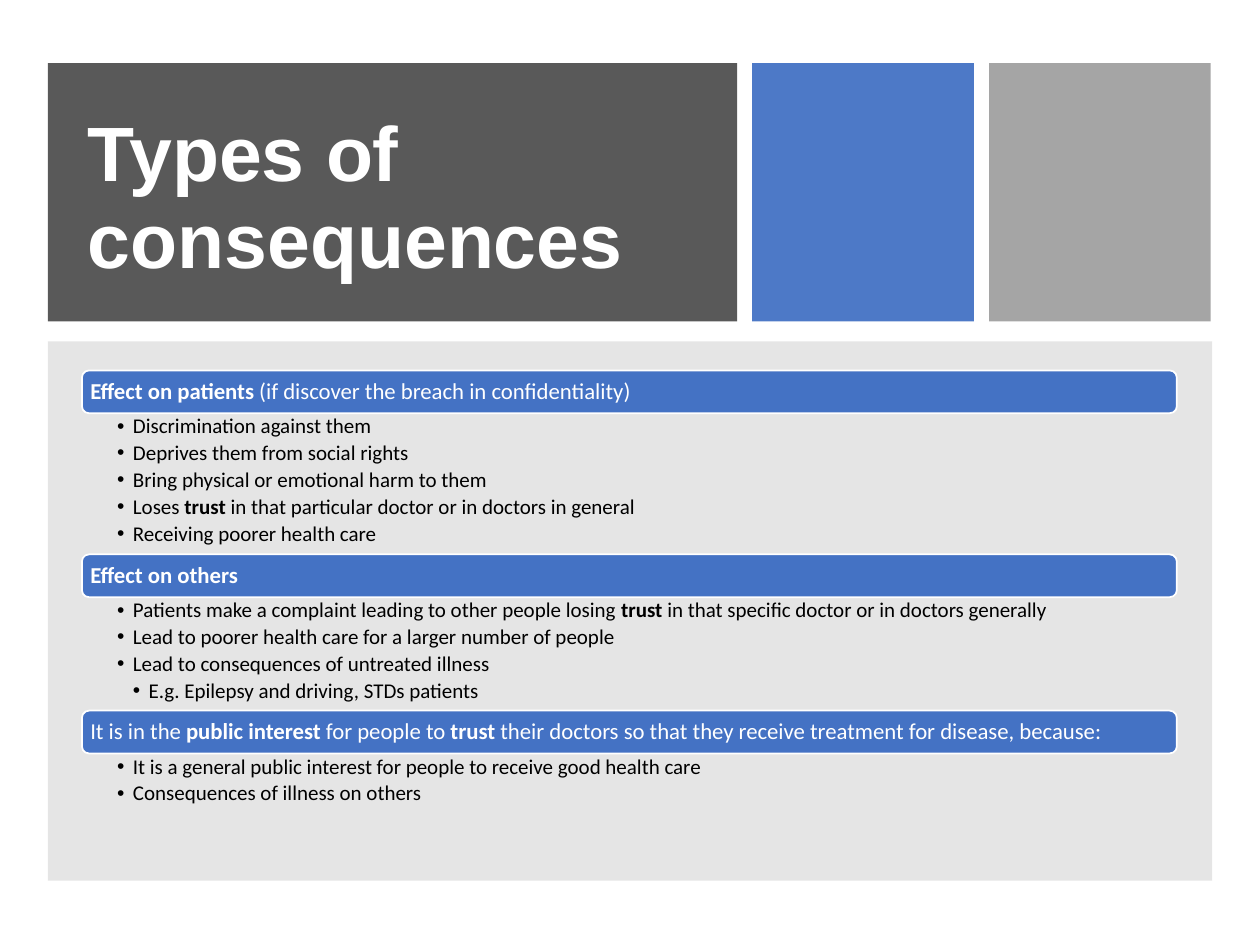
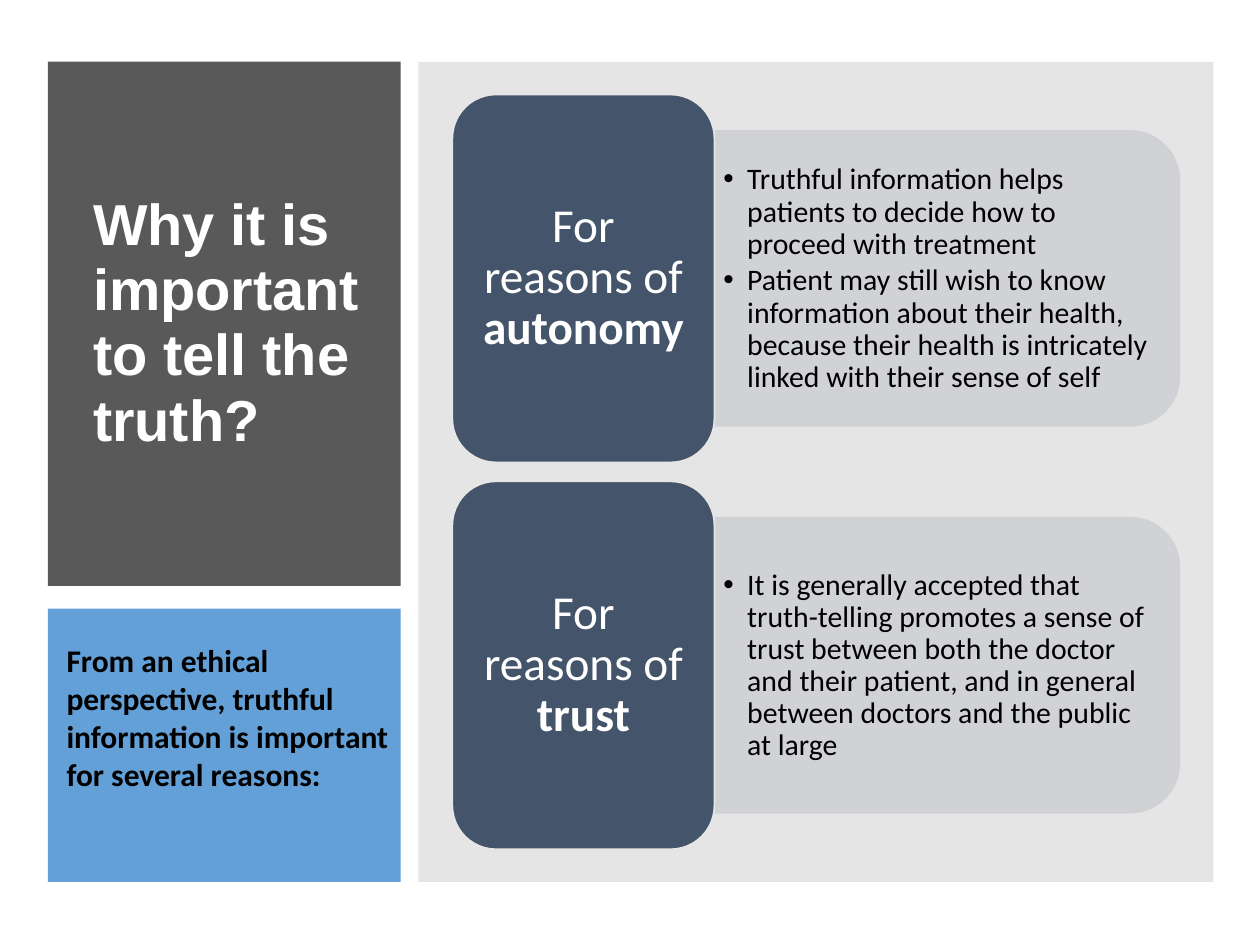
from pptx import Presentation
from pptx.dml.color import RGBColor
from pptx.enum.shapes import MSO_SHAPE
from pptx.enum.text import MSO_ANCHOR, PP_ALIGN
from pptx.oxml.ns import qn
from pptx.util import Inches, Pt
from lxml import etree

RECT, ROUND = MSO_SHAPE.RECTANGLE, MSO_SHAPE.ROUNDED_RECTANGLE
TAB = MSO_SHAPE.ROUND_2_SAME_RECTANGLE
TOP, MID = MSO_ANCHOR.TOP, MSO_ANCHOR.MIDDLE
LEFT, MIDDLE = PP_ALIGN.LEFT, PP_ALIGN.CENTER


class Theme:
    head, body = "Arial", "Calibri"
    white, black = "FFFFFF", "000000"
    dark, blue, sky, grey = "595959", "4472C4", "5B9BD5", "A5A5A5"
    panel, slate, edge, pale = "808080", "44546A", "E7E6E6", "CFD1D4"
    big, title, card, note, point, bar, item = 44, 33, 27, 18, 17, 13, 12


# Asterisks enclose bold words; each bullet is (level, text).
EFFECTS = [
    ("*Effect on patients *(if discover the breach in confidentiality)", [
        (0, "Discrimination against them"),
        (0, "Deprives them from social rights"),
        (0, "Bring physical or emotional harm to them"),
        (0, "Loses *trust* in that particular doctor or in doctors in general"),
        (0, "Receiving poorer health care")]),
    ("*Effect on others*", [
        (0, "Patients make a complaint leading to other people losing *trust*"
            " in that specific doctor or in doctors generally"),
        (0, "Lead to poorer health care for a larger number of people"),
        (0, "Lead to consequences of untreated illness"),
        (1, "E.g. Epilepsy and driving, STDs patients")]),
    ("It is in the *public interest *for people to *trust* their doctors"
     " so that they receive treatment for disease, because:", [
        (0, "It is a general public interest for people to receive good health care"),
        (0, "Consequences of illness on others")]),
]
REASONS = [
    ("For reasons of *autonomy*", [
        (0, "Truthful information helps patients to decide how to proceed with treatment"),
        (0, "Patient may still wish to know information about their health, because"
            " their health is intricately linked with their sense of self")]),
    ("For reasons of *trust*", [
        (0, "It is generally accepted that truth-telling promotes a sense of trust"
            " between both the doctor and their patient, and in general between"
            " doctors and the public at large")]),
]
NOTE = "*From an ethical perspective, truthful information is important for several reasons:*"


def paint(fill, color, alpha=100):
    fill.solid()
    fill.fore_color.rgb = RGBColor.from_string(color)
    if alpha < 100:
        for tone in fill._xPr.iter(qn("a:srgbClr")):
            etree.SubElement(tone, qn("a:alpha")).set("val", str(alpha * 1000))


def block(slide, box, color, alpha=100, kind=RECT, line=None):
    shape = slide.shapes.add_shape(kind, *map(Inches, box))
    shape.shadow.inherit = False
    paint(shape.fill, color, alpha)
    if line:
        paint(shape.line.fill, line, alpha)
        shape.line.width = Pt(1)
    else:
        shape.line.fill.background()
    return shape


def label(slide, box):
    return slide.shapes.add_textbox(*map(Inches, box))


def frame(shape, pad, anchor):
    text = shape.text_frame
    text.word_wrap = True
    text.vertical_anchor = anchor
    text.margin_left, text.margin_top, text.margin_right, text.margin_bottom = map(Inches, pad)
    return text


def write(para, words, size, color, font=Theme.body, align=LEFT, space=0.9, after=0):
    para.alignment = align
    para.line_spacing = space
    para.space_after = Pt(after)
    for i, part in enumerate(words.split("*")):
        if part:
            run = para.add_run()
            run.text = part
            run.font.name, run.font.size, run.font.bold = font, Pt(size), i % 2 == 1
            run.font.color.rgb = RGBColor.from_string(color)


def points(text, items, size, step, after):
    for i, (level, words) in enumerate(items):
        para = text.add_paragraph() if i else text.paragraphs[0]
        write(para, words, size, Theme.black, after=after)
        props = para._p.get_or_add_pPr()
        props.set("marL", str(Inches(step * (level + 1))))
        props.set("indent", str(-Inches(step)))
        etree.SubElement(props, qn("a:buFont")).set("typeface", Theme.head)
        etree.SubElement(props, qn("a:buChar")).set("char", "•")


def title(slide, box, words, size):
    text = frame(label(slide, box), (0.1, 0.05, 0.1, 0.05), MID)
    write(text.paragraphs[0], f"*{words}*", size, Theme.white, Theme.head, space=0.94)


def effects(slide):
    block(slide, (0.38, 0.5, 5.47, 2.05), Theme.dark)
    title(slide, (0.6, 0.8, 5, 1.56), "Types of consequences", Theme.big)
    block(slide, (5.97, 0.5, 1.76, 2.05), Theme.blue, 95)
    block(slide, (7.85, 0.5, 1.76, 2.05), Theme.grey)
    block(slide, (0.38, 2.71, 9.24, 4.28), Theme.panel, 20)
    left, top, width, high = 0.65, 2.94, 8.69, 0.34
    for head, items in EFFECTS:
        bar = block(slide, (left, top, width, high), Theme.blue, kind=ROUND, line=Theme.white)
        text = frame(bar, (0.05,) * 4, MID)
        write(text.paragraphs[0], head, Theme.bar, Theme.white)
        top += high
        deep = 0.22 * len(items) + 0.02
        text = frame(label(slide, (left, top, width, deep)), (0.28, 0.02, 0.09, 0.02), TOP)
        points(text, items, Theme.item, 0.125, 2.4)
        top += deep


def reasons(slide):
    block(slide, (0.38, 0.49, 2.8, 4.16), Theme.dark)
    title(slide, (0.64, 0.8, 2.33, 3.54), "Why it is important to tell the truth?", Theme.title)
    block(slide, (0.38, 4.83, 2.8, 2.17), Theme.sky, 95)
    block(slide, (3.32, 0.49, 6.31, 6.51), Theme.panel, 20)
    left, wide, high, gap = 3.59, 2.08, 2.92, 0.15
    reach, deep = 3.69, 2.34
    edge = left + wide
    for i, (head, items) in enumerate(REASONS):
        top = 0.75 + i * (high + gap)
        mid = top + high / 2
        spot = (edge + (reach - deep) / 2, mid - reach / 2, deep, reach)
        block(slide, spot, Theme.pale, 90, TAB, Theme.pale).rotation = 90
        text = frame(label(slide, (edge, mid - 1.05, 3.58, 2.11)), (0.07, 0.04, 0.07, 0.04), MID)
        points(text, items, Theme.point, 0.19, 2.6)
        card = block(slide, (left, top, wide, high), Theme.slate, kind=ROUND, line=Theme.edge)
        text = frame(card, (0.11, 0.06, 0.11, 0.06), MID)
        write(text.paragraphs[0], head, Theme.card, Theme.white, align=MIDDLE)
    text = frame(label(slide, (0.43, 5.04, 2.76, 1.31)), (0.1, 0.05, 0.1, 0.05), TOP)
    write(text.paragraphs[0], NOTE, Theme.note, Theme.black, space=1)


def main():
    deck = Presentation()
    deck.slide_width, deck.slide_height = Inches(10), Inches(7.5)
    for build in (effects, reasons):
        build(deck.slides.add_slide(deck.slide_layouts[6]))
    deck.save("out.pptx")


if __name__ == "__main__":
    main()
